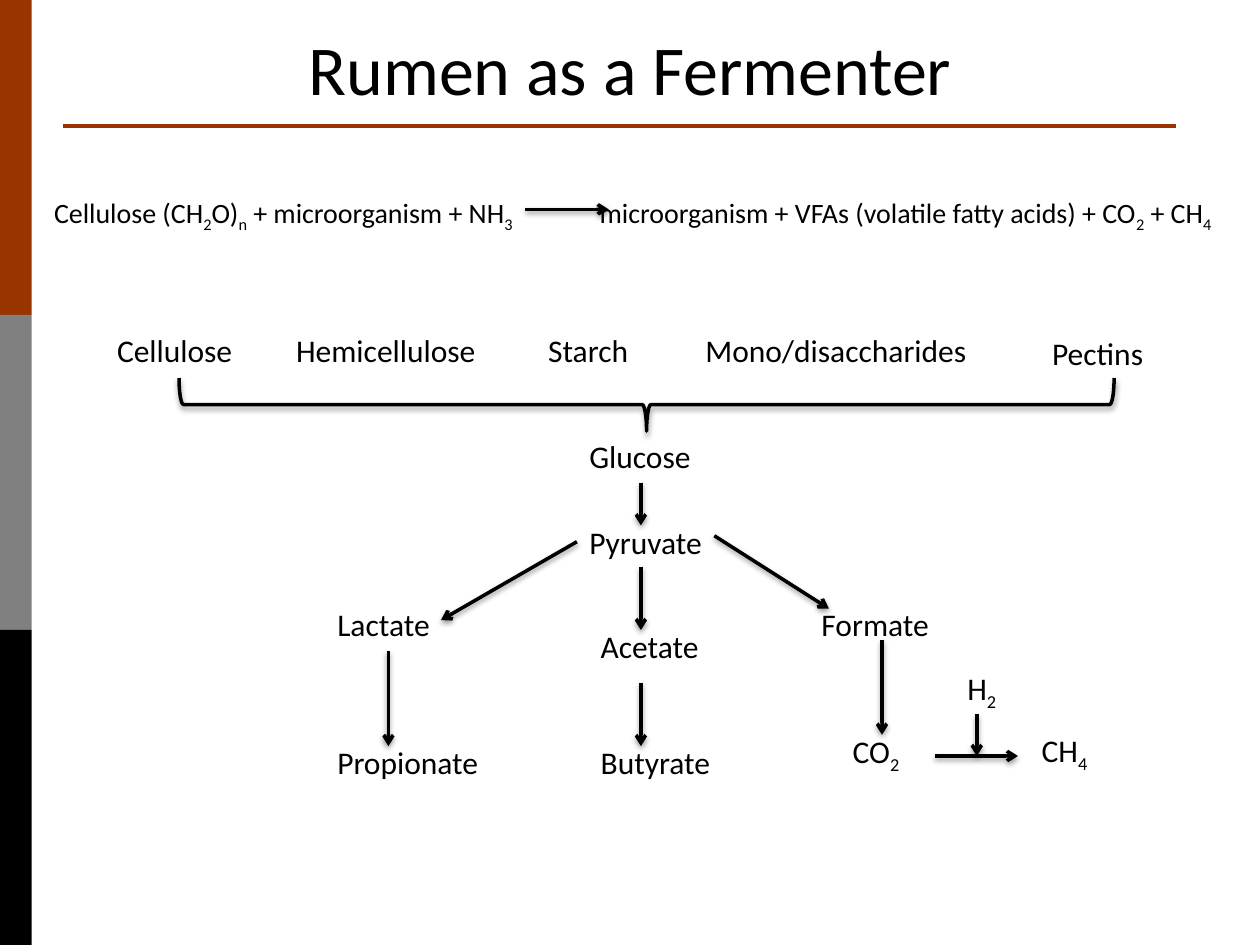
from lxml import etree
from pptx import Presentation
from pptx.dml.color import RGBColor
from pptx.enum.shapes import MSO_CONNECTOR, MSO_SHAPE as SHAPE
from pptx.enum.text import MSO_ANCHOR, PP_ALIGN
from pptx.oxml.ns import qn
from pptx.util import Cm, Pt

COLORS = {"rust": "993300", "gray": "808080", "black": "000000"}
FONT = "Calibri"

# Labels: text ("_" marks a subscript character), left, top, width in cm
LABELS = [
    ("Cellulose", 2.11, 6.55, 3.18),
    ("Hemicellulose", 5.72, 6.55, 4.88),
    ("Starch", 10.8, 6.55, 2.54),
    ("Mono/disaccharides", 13.97, 6.55, 7.19),
    ("Pectins", 20.96, 6.6, 3.18),
    ("Glucose", 11.63, 8.69, 3.18),
    ("Pyruvate", 11.63, 10.41, 3.18),
    ("Acetate", 11.86, 12.52, 3.18),
    ("Butyrate", 11.86, 14.86, 3.18),
    ("Lactate", 6.55, 12.07, 3.18),
    ("Propionate", 6.55, 14.86, 3.6),
    ("Formate", 16.31, 12.07, 3.18),
    ("CO_2", 16.94, 14.63, 2.11),
    ("CH_4", 20.75, 14.61, 2.11),
    ("H_2", 19.25, 13.36, 2.11),
]

# Arrows: x1, y1, x2, y2 in cm
ARROWS = [
    (10.59, 4.22, 12.27, 4.22),   # equation
    (12.92, 9.73, 12.92, 10.59),  # glucose to pyruvate
    (11.63, 10.92, 8.89, 12.5),   # pyruvate to lactate
    (14.4, 10.8, 16.71, 12.27),   # pyruvate to formate
    (12.92, 11.43, 12.92, 12.7),  # pyruvate to acetate
    (12.92, 13.77, 12.92, 15.04), # acetate to butyrate
    (7.83, 13.13, 7.83, 15.04),   # lactate to propionate
    (17.78, 12.9, 17.78, 14.81),  # formate to carbon dioxide
    (19.69, 14.4, 19.69, 15.24),  # hydrogen joins in
    (18.85, 15.24, 20.52, 15.24), # carbon dioxide to methane
]


def rgb(name):
    return RGBColor.from_string(COLORS[name])


def style_font(font, size):
    font.name = FONT
    font.size = Pt(size)
    font.color.rgb = rgb("black")


def set_effects(sp, shadow):
    effects = etree.SubElement(sp._element.spPr, qn("a:effectLst"))
    if shadow:
        outer = etree.SubElement(effects, qn("a:outerShdw"), blurRad=str(Pt(3.1)),
                                 dist=str(Pt(1.6)), dir="5400000", rotWithShape="0")
        color = etree.SubElement(outer, qn("a:srgbClr"), val=COLORS["black"])
        etree.SubElement(color, qn("a:alpha"), val="38000")


def add_text(slide, text, left, top, width, height=1.02, size=18, tab=None):
    box = slide.shapes.add_textbox(Cm(left), Cm(top), Cm(width), Cm(height))
    tf = box.text_frame
    tf.word_wrap = True
    p = tf.paragraphs[0]
    if tab:
        tabs = etree.SubElement(p._p.get_or_add_pPr(), qn("a:tabLst"))
        etree.SubElement(tabs, qn("a:tab"), pos=str(Cm(tab)), algn="l")
    style_font(p.font, size)
    first, *rest = text.split("_")
    p.add_run().text = first
    for part in rest:
        sub = p.add_run()
        sub.text = part[0]
        sub._r.get_or_add_rPr().set("baseline", "-25000")
        if part[1:]:
            p.add_run().text = part[1:]


def add_line(slide, x1, y1, x2, y2, color="black", width=2, arrow=False):
    line = slide.shapes.add_connector(MSO_CONNECTOR.STRAIGHT, Cm(x1), Cm(y1), Cm(x2), Cm(y2))
    line.line.color.rgb = rgb(color)
    line.line.width = Pt(width)
    if arrow:
        etree.SubElement(line.line._get_or_add_ln(), qn("a:tailEnd"), type="arrow")
    set_effects(line, shadow=arrow)


def add_band(slide, top, color):
    sp = slide.shapes.add_shape(SHAPE.RECTANGLE, 0, Cm(top), Cm(0.64), Cm(6.35))
    sp.shadow.inherit = False
    sp.fill.solid()
    sp.fill.fore_color.rgb = rgb(color)
    sp.line.fill.background()


def add_brace(slide, left, top, width, height):
    sp = slide.shapes.add_shape(SHAPE.LEFT_BRACE, Cm(left), Cm(top), Cm(width), Cm(height))
    sp.rotation = 270
    sp.fill.background()
    sp.line.color.rgb = rgb("black")
    sp.line.width = Pt(2)
    set_effects(sp, shadow=True)


def set_title(slide, text):
    title = slide.shapes.title
    title.left, title.top, title.width, title.height = Cm(1.27), Cm(0), Cm(22.86), Cm(2.34)
    tf = title.text_frame
    tf.text = text
    tf.vertical_anchor = MSO_ANCHOR.BOTTOM
    p = tf.paragraphs[0]
    p.alignment = PP_ALIGN.CENTER
    style_font(p.font, 40)


def main():
    prs = Presentation()
    prs.slide_width, prs.slide_height = Cm(25.4), Cm(19.05)
    slide = prs.slides.add_slide(prs.slide_layouts[5])

    # Side bands, title and rule
    for i, color in enumerate(("rust", "gray", "black")):
        add_band(slide, i * 6.35, color)
    add_line(slide, 1.27, 2.54, 23.7, 2.54, "rust", 2.25)
    set_title(slide, "Rumen as a Fermenter")

    # Overall equation, with a tab leaving room for its arrow
    add_text(slide, "Cellulose (CH_2O)_n + microorganism + NH_3\t"
             "microorganism + VFAs (volatile fatty acids) + CO_2 + CH_4",
             0.84, 3.81, 25.2, 1.27, size=16, tab=11)

    # Fermentation pathway
    for label in LABELS:
        add_text(slide, *label)
    add_brace(slide, 12.5, -1.27, 1.07, 18.85)
    for ends in ARROWS:
        add_line(slide, *ends, arrow=True)

    prs.save("out.pptx")


if __name__ == "__main__":
    main()
